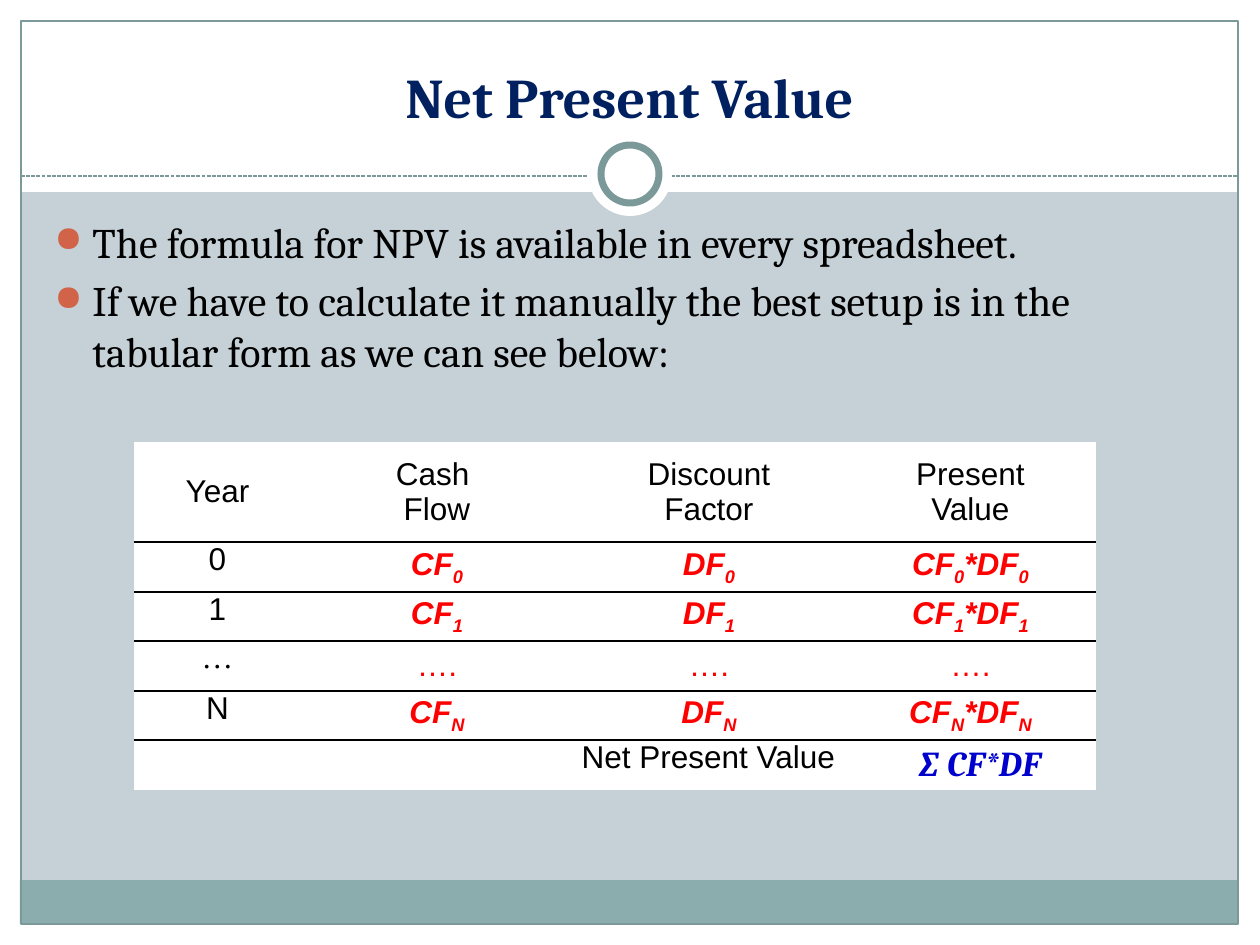
"""Build the Net Present Value slide with its discount table."""
import dataclasses
import typing

import pptx
import pptx.dml.color
import pptx.enum.dml
import pptx.enum.shapes
import pptx.enum.text
import pptx.oxml
import pptx.oxml.ns
import pptx.util

SCALE = 914400 / 126
KIND = pptx.enum.shapes.MSO_SHAPE
ALIGN = pptx.enum.text.PP_ALIGN
ANCHOR = pptx.enum.text.MSO_ANCHOR
PLAIN = "{2D5ABB26-0587-4C30-8999-92F81FD0307C}"


@dataclasses.dataclass(frozen=True)
class Theme:
    back: str = "C5D1D7"
    white: str = "FFFFFF"
    band: str = "8CADAE"
    edge: str = "7C999A"
    navy: str = "002060"
    black: str = "000000"
    red: str = "FF0000"
    blue: str = "0000CC"
    dot: str = "D16349"
    serif: str = "Cambria"
    sans: str = "Arial"
    times: str = "Times New Roman"
    head: int = 32
    body: int = 24
    cell: int = 18
    sum: int = 20


THEME = Theme()


class Box(typing.NamedTuple):
    left: int
    top: int
    width: int
    height: int


class Form(typing.NamedTuple):
    box: Box
    fill: str | None = THEME.white
    line: str | None = None
    weight: float = 0.75
    kind: KIND = KIND.RECTANGLE


class Style(typing.NamedTuple):
    size: int = THEME.cell
    font: str = THEME.sans
    tint: str = THEME.black
    bold: bool = False
    slant: bool = False


class Entry(typing.NamedTuple):
    text: str
    style: Style = Style()
    anchor: ANCHOR = ANCHOR.MIDDLE
    align: ALIGN = ALIGN.CENTER
    right: int = 10


FORMS = [
    Form(Box(0, 924, 1260, 21)),
    Form(Box(0, 0, 1260, 192)),
    Form(Box(0, 0, 21, 945)),
    Form(Box(1239, 0, 21, 945)),
    Form(Box(20, 880, 1218, 44), THEME.band),
    Form(Box(21, 21, 1217, 903), None, THEME.edge),
]
RINGS = [
    Form(Box(588, 132, 84, 84), kind=KIND.OVAL),
    Form(Box(601, 145, 58, 58), THEME.white, THEME.edge, 4, KIND.OVAL),
]
POINTS = [
    "The formula for NPV is available in every spreadsheet.",
    "If we have to calculate it manually the best setup is in the "
    "tabular form as we can see below:",
]
MATH = Style(tint=THEME.red, bold=True, slant=True)
DOTS = Style(font=THEME.times)


def px(count: int) -> int:
    return round(count * SCALE)


def place(box: Box) -> list[int]:
    return [px(side) for side in box]


def rgb(code: str) -> pptx.dml.color.RGBColor:
    return pptx.dml.color.RGBColor.from_string(code)


def paint(run: typing.Any, style: Style) -> None:
    font = run.font
    font.size, font.name = pptx.util.Pt(style.size), style.font
    font.bold, font.italic = style.bold, style.slant
    font.color.rgb = rgb(style.tint)


def draw(slide: typing.Any, form: Form) -> None:
    shape = slide.shapes.add_shape(form.kind, *place(form.box))
    shape.shadow.inherit = False
    if form.fill:
        shape.fill.solid()
        shape.fill.fore_color.rgb = rgb(form.fill)
    else:
        shape.fill.background()
    if form.line:
        shape.line.color.rgb = rgb(form.line)
        shape.line.width = pptx.util.Pt(form.weight)
    else:
        shape.line.fill.background()


def rule(slide: typing.Any) -> None:
    line = slide.shapes.add_connector(
        pptx.enum.shapes.MSO_CONNECTOR.STRAIGHT, px(21), px(176), px(1238), px(176))
    line.line.color.rgb = rgb(THEME.edge)
    line.line.width = pptx.util.Pt(0.75)
    line.line.dash_style = pptx.enum.dml.MSO_LINE.SQUARE_DOT
    props = line._element.spPr
    props.append(props.makeelement(pptx.oxml.ns.qn("a:effectLst"), {}))


def write(slide: typing.Any, box: Box, text: str, style: Style) -> typing.Any:
    frame = slide.shapes.add_textbox(*place(box)).text_frame
    frame.word_wrap = True
    frame.text = text
    for para in frame.paragraphs:
        for run in para.runs:
            paint(run, style)
    return frame


def bullet(para: typing.Any) -> None:
    props = para._p.get_or_add_pPr()
    props.set("marL", str(px(38)))
    props.set("indent", str(px(-38)))
    para.space_before = pptx.util.Pt(4.8)
    space = pptx.oxml.ns.nsdecls("a")
    for part in (f'<a:buClr {space}><a:srgbClr val="{THEME.dot}"/></a:buClr>',
                 f'<a:buSzPct {space} val="85000"/>',
                 f'<a:buChar {space} char="●"/>'):
        props.append(pptx.oxml.parse_xml(part))


def border(cell: typing.Any, side: str) -> None:
    space = pptx.oxml.ns.nsdecls("a")
    cell._tc.get_or_add_tcPr().insert(0, pptx.oxml.parse_xml(
        f'<a:{side} {space} w="12700"><a:solidFill>'
        f'<a:srgbClr val="{THEME.black}"/></a:solidFill></a:{side}>'))


def fill(cell: typing.Any, entry: Entry) -> None:
    cell.fill.solid()
    cell.fill.fore_color.rgb = rgb(THEME.white)
    cell.margin_left, cell.margin_right = px(10), px(entry.right)
    cell.margin_top = cell.margin_bottom = 0
    cell.vertical_anchor = entry.anchor
    frame = cell.text_frame
    frame.text = entry.text.replace("_", "")
    for para in frame.paragraphs:
        para.alignment = entry.align
    if "_" in entry.text:
        para = frame.paragraphs[0]
        para.text = ""
        for spot, part in enumerate(entry.text.split("_")):
            if part:
                run = para.add_run()
                run.text = part
                if spot % 2:
                    run.font._element.set("baseline", "-25000")
    for para in frame.paragraphs:
        for run in para.runs:
            paint(run, entry.style)


def grid(slide: typing.Any, spot: tuple[int, int], cols: list[int],
         rows: list[int], data: list[list[Entry]], side: str) -> None:
    box = Box(*spot, sum(cols), sum(rows))
    table = slide.shapes.add_table(len(rows), len(cols), *place(box)).table
    table.first_row = table.horz_banding = False
    table._tbl.tblPr.find(pptx.oxml.ns.qn("a:tableStyleId")).text = PLAIN
    for col, width in zip(table.columns, cols):
        col.width = px(width)
    for row, height, items in zip(table.rows, rows, data):
        row.height = px(height)
        for cell, entry in zip(row.cells, items):
            fill(cell, entry)
            border(cell, side)


def period(key: str) -> list[Entry]:
    terms = [f"CF_{key}_", f"DF_{key}_", f"CF_{key}_*DF_{key}_"]
    return [Entry(key, anchor=ANCHOR.TOP), *(Entry(term, MATH) for term in terms)]


def main() -> None:
    deck = pptx.Presentation()
    deck.slide_width, deck.slide_height = px(1260), px(945)
    slide = deck.slides.add_slide(deck.slide_layouts[6])
    slide.background.fill.solid()
    slide.background.fill.fore_color.rgb = rgb(THEME.back)
    for form in FORMS:
        draw(slide, form)
    rule(slide)
    for ring in RINGS:
        draw(slide, ring)
    title = write(slide, Box(42, 32, 1175, 104), "Net Present Value",
                  Style(THEME.head, THEME.serif, THEME.navy, True))
    title.vertical_anchor = ANCHOR.BOTTOM
    title.paragraphs[0].alignment = ALIGN.CENTER
    body = write(slide, Box(42, 210, 1154, 630), "\n".join(POINTS),
                 Style(THEME.body, THEME.serif))
    for para in body.paragraphs:
        bullet(para)
    heads = ["Year", "Cash \nFlow", "Discount\nFactor", "Present\nValue"]
    gap = [Entry("…", DOTS, ANCHOR.TOP)] + [Entry("….", Style(tint=THEME.red))] * 3
    data = [[Entry(head) for head in heads], period("0"), period("1"), gap, period("N")]
    grid(slide, (134, 442), [167, 272, 272, 251], [100, 50, 49, 50, 49], data, "lnB")
    total = [Entry("Net Present Value", anchor=ANCHOR.TOP, align=ALIGN.RIGHT),
             Entry("∑ CF*DF", Style(THEME.sum, THEME.serif, THEME.blue, True, True),
                   align=ALIGN.RIGHT, right=55)]
    grid(slide, (134, 740), [711, 251], [50], [total], "lnT")
    deck.save("out.pptx")


if __name__ == "__main__":
    main()
